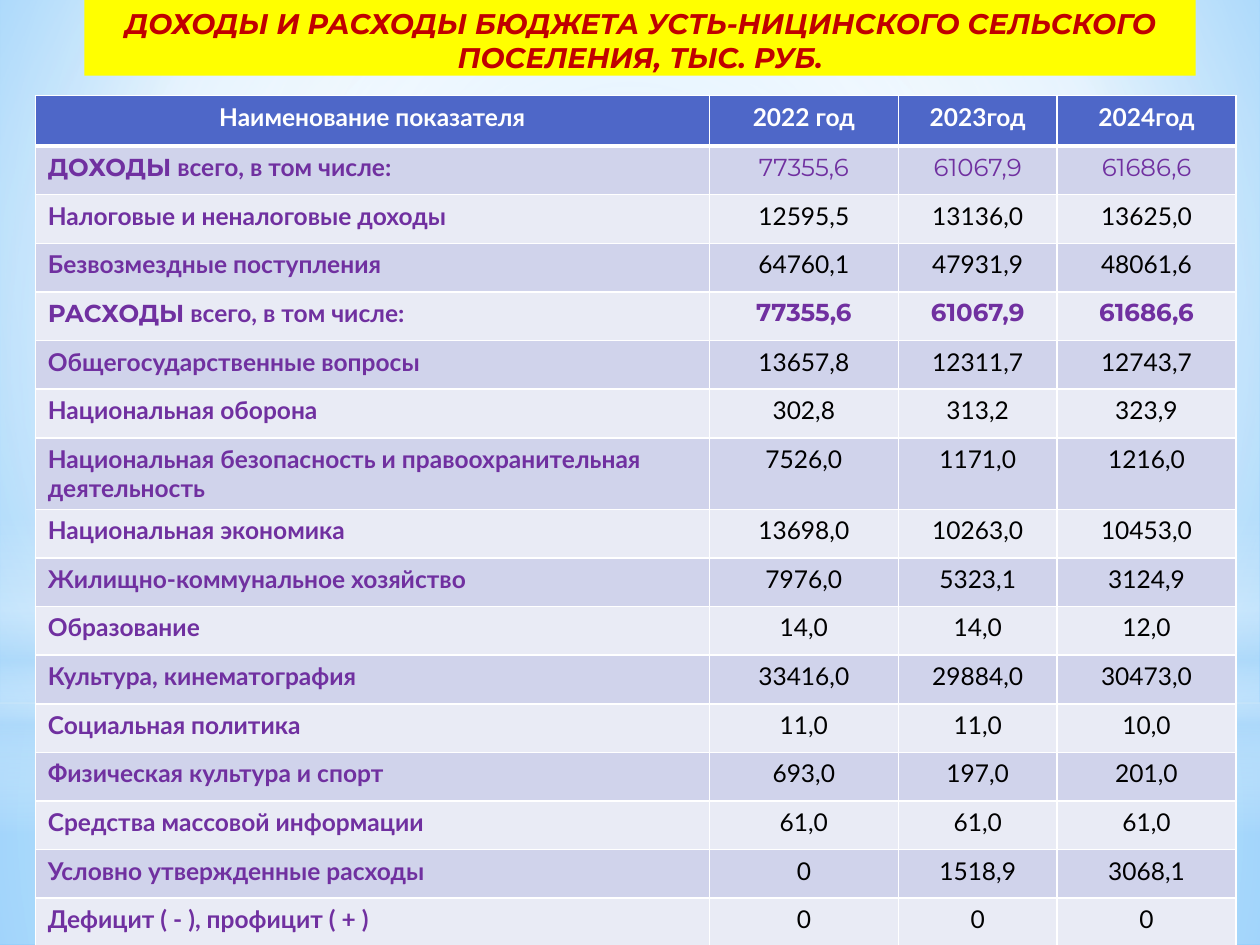
from lxml import etree
from pptx import Presentation
from pptx.dml.color import RGBColor
from pptx.enum.shapes import MSO_SHAPE
from pptx.enum.text import MSO_ANCHOR, MSO_AUTO_SIZE, PP_ALIGN
from pptx.oxml import parse_xml
from pptx.oxml.ns import nsdecls, qn
from pptx.util import Inches, Pt

RECTANGLE, OVAL = MSO_SHAPE.RECTANGLE, MSO_SHAPE.OVAL
LEFT, CENTER = PP_ALIGN.LEFT, PP_ALIGN.CENTER

# Content
TITLE = "ДОХОДЫ И РАСХОДЫ БЮДЖЕТА УСТЬ-НИЦИНСКОГО СЕЛЬСКОГО ПОСЕЛЕНИЯ, ТЫС. РУБ."
HEADER = ("Наименование показателя", "2022 год", "2023год", "2024год")
ROWS = [
    ("ДОХОДЫ всего, в том числе:", "77355,6", "61067,9", "61686,6"),
    ("Налоговые и неналоговые доходы", "12595,5", "13136,0", "13625,0"),
    ("Безвозмездные поступления", "64760,1", "47931,9", "48061,6"),
    ("РАСХОДЫ всего, в том числе:", "77355,6", "61067,9", "61686,6"),
    ("Общегосударственные вопросы", "13657,8", "12311,7", "12743,7"),
    ("Национальная оборона", "302,8", "313,2", "323,9"),
    ("Национальная безопасность и правоохранительная деятельность",
     "7526,0", "1171,0", "1216,0"),
    ("Национальная экономика", "13698,0", "10263,0", "10453,0"),
    ("Жилищно-коммунальное хозяйство", "7976,0", "5323,1", "3124,9"),
    ("Образование", "14,0", "14,0", "12,0"),
    ("Культура, кинематография", "33416,0", "29884,0", "30473,0"),
    ("Социальная политика", "11,0", "11,0", "10,0"),
    ("Физическая культура и спорт", "693,0", "197,0", "201,0"),
    ("Средства массовой информации", "61,0", "61,0", "61,0"),
    ("Условно утвержденные расходы", "0", "1518,9", "3068,1"),
    ("Дефицит ( - ), профицит ( + )", "0", "0", "0"),
]
TOTALS_BOLD = {"ДОХОДЫ": False, "РАСХОДЫ": True}  # total word: bold figures

# Look
PURPLE, BLACK, WHITE = "7030A0", "000000", "FFFFFF"
HEADER_FILL, BANDS = "4E67C8", ("D0D3EB", "E9EBF5")
TEXT_FONT, ACCENT_FONT = "Lato", "Montserrat"

# Layout, in inches
TABLE_BOX = (0.28, 0.76, 9.53, 6.75)
COLUMN_WIDTHS = (5.35, 1.5, 1.26, 1.42)
HEADER_HEIGHT, TWO_LINE_HEIGHT, TWO_LINE_ROW = 0.4, 0.56, 7

# Gradients: stops are (position %, colour, opacity %)
CENTRED = (50, 50, 50, 50)
BACKGROUND = [(0, "9ED5FF", 100), (60, WHITE, 100), (100, "5BB9FF", 100)]
BACKDROP = [  # shape, box, stops, focus rectangle (None: vertical gradient)
    (RECTANGLE, (0, 5.58, 10, 1.92),
     [(0, WHITE, 91), (37, WHITE, 76), (100, "B4DCFA", 79)], CENTRED),
    (RECTANGLE, (0, 0, 10, 5.58),
     [(0, WHITE, 89), (48, WHITE, 62), (100, "B4DCFA", 79)], CENTRED),
    (RECTANGLE, (0, 4.12, 10, 2.5),
     [(0, WHITE, 0), (29, WHITE, 30), (45, "B4DCFA", 40), (55, WHITE, 26),
      (65, "B4DCFA", 60), (100, WHITE, 0)], None),
    (OVAL, (0, 1.75, 10, 5.58), [(0, WHITE, 100), (56, WHITE, 0)], CENTRED),
]


def color(value):
    return RGBColor.from_string(value)


def gradient(stops, focus):
    stop_xml = "".join(
        f'<a:gs pos="{position * 1000}"><a:srgbClr val="{value}">'
        f'<a:alpha val="{opacity * 1000}"/></a:srgbClr></a:gs>'
        for position, value, opacity in stops)
    if focus:
        edges = " ".join(f'{side}="{percent * 1000}"' for side, percent in zip("ltrb", focus))
        direction = f'<a:path path="circle"><a:fillToRect {edges}/></a:path>'
    else:
        direction = '<a:lin ang="5400000" scaled="0"/>'
    return parse_xml(f'<a:gradFill {nsdecls("a")} rotWithShape="1">'
                     f'<a:gsLst>{stop_xml}</a:gsLst>{direction}</a:gradFill>')


def set_background(slide):
    slide.background.fill.solid()
    properties = slide.background._cSld.find(qn("p:bg")).find(qn("p:bgPr"))
    properties.replace(properties[0], gradient(BACKGROUND, (20, 10, 20, 60)))


def add_backdrop(slide):
    for kind, box, stops, focus in BACKDROP:
        shape = slide.shapes.add_shape(kind, *map(Inches, box))
        shape.shadow.inherit = False
        shape.line.fill.background()
        shape.fill.solid()
        properties = shape._element.spPr
        properties.replace(properties.find(qn("a:solidFill")), gradient(stops, focus))


def format_title(slide):
    title = slide.shapes.title
    slide.shapes._spTree.append(title._element)  # in front of the backdrop
    title.left, title.top, title.width, title.height = map(Inches, (0.67, 0, 8.82, 0.6))
    title.fill.solid()
    title.fill.fore_color.rgb = color("FFFF00")
    frame = title.text_frame
    frame.text = TITLE
    frame.auto_size, frame.vertical_anchor = MSO_AUTO_SIZE.NONE, MSO_ANCHOR.TOP
    paragraph = frame.paragraphs[0]
    paragraph.alignment = CENTER
    font = paragraph.font
    font.name, font.size, font.bold, font.italic = ACCENT_FONT, Pt(16.2), True, True
    font.color.rgb = color("C00000")


def format_cell(cell, fill, top, bottom):
    properties = cell._tc.get_or_add_tcPr()
    for side, width in (("L", 1), ("R", 1), ("T", top), ("B", bottom)):
        line = etree.SubElement(properties, qn(f"a:ln{side}"), w=str(Pt(width)))
        solid = etree.SubElement(line, qn("a:solidFill"))
        etree.SubElement(solid, qn("a:srgbClr"), val=WHITE)
    cell.fill.solid()
    cell.fill.fore_color.rgb = color(fill)


def write(cell, runs, alignment, text_color, bold):
    paragraph = cell.text_frame.paragraphs[0]
    paragraph.alignment = alignment
    for text, font_name in runs:
        run = paragraph.add_run()
        run.text = text
        font = run.font
        font.name, font.size, font.bold = font_name, Pt(14), bold
        font.color.rgb = color(text_color)


def add_budget_table(slide):
    table = slide.shapes.add_table(
        len(ROWS) + 1, len(HEADER), *map(Inches, TABLE_BOX)).table
    for column, width in zip(table.columns, COLUMN_WIDTHS):
        column.width = Inches(width)
    row_height = (TABLE_BOX[3] - HEADER_HEIGHT - TWO_LINE_HEIGHT) / (len(ROWS) - 1)
    special_heights = {0: HEADER_HEIGHT, TWO_LINE_ROW: TWO_LINE_HEIGHT}
    for index, row in enumerate(table.rows):
        row.height = Inches(special_heights.get(index, row_height))

    # Header
    for column, text in enumerate(HEADER):
        cell = table.cell(0, column)
        format_cell(cell, HEADER_FILL, 1, 3)
        write(cell, [(text, TEXT_FONT)], CENTER, WHITE, True)

    # Indicators and their figures
    for index, (label, *figures) in enumerate(ROWS, start=1):
        for column in range(len(HEADER)):
            format_cell(table.cell(index, column), BANDS[(index - 1) % 2],
                        3 if index == 1 else 1, 1)
        word, space, rest = label.partition(" ")
        is_total = word in TOTALS_BOLD
        runs = [(label, TEXT_FONT)]
        figure_font, figure_color = TEXT_FONT, BLACK
        if is_total:
            runs = [(word, ACCENT_FONT), (space + rest, TEXT_FONT)]
            figure_font, figure_color = ACCENT_FONT, PURPLE
        write(table.cell(index, 0), runs, LEFT, PURPLE, True)
        for column, figure in enumerate(figures, start=1):
            write(table.cell(index, column), [(figure, figure_font)], CENTER,
                  figure_color, TOTALS_BOLD.get(word, False))


def main():
    presentation = Presentation()
    presentation.slide_width, presentation.slide_height = Inches(10), Inches(7.5)
    slide = presentation.slides.add_slide(presentation.slide_layouts[5])  # title only
    set_background(slide)
    add_backdrop(slide)
    format_title(slide)
    add_budget_table(slide)
    presentation.save("out.pptx")


if __name__ == "__main__":
    main()
